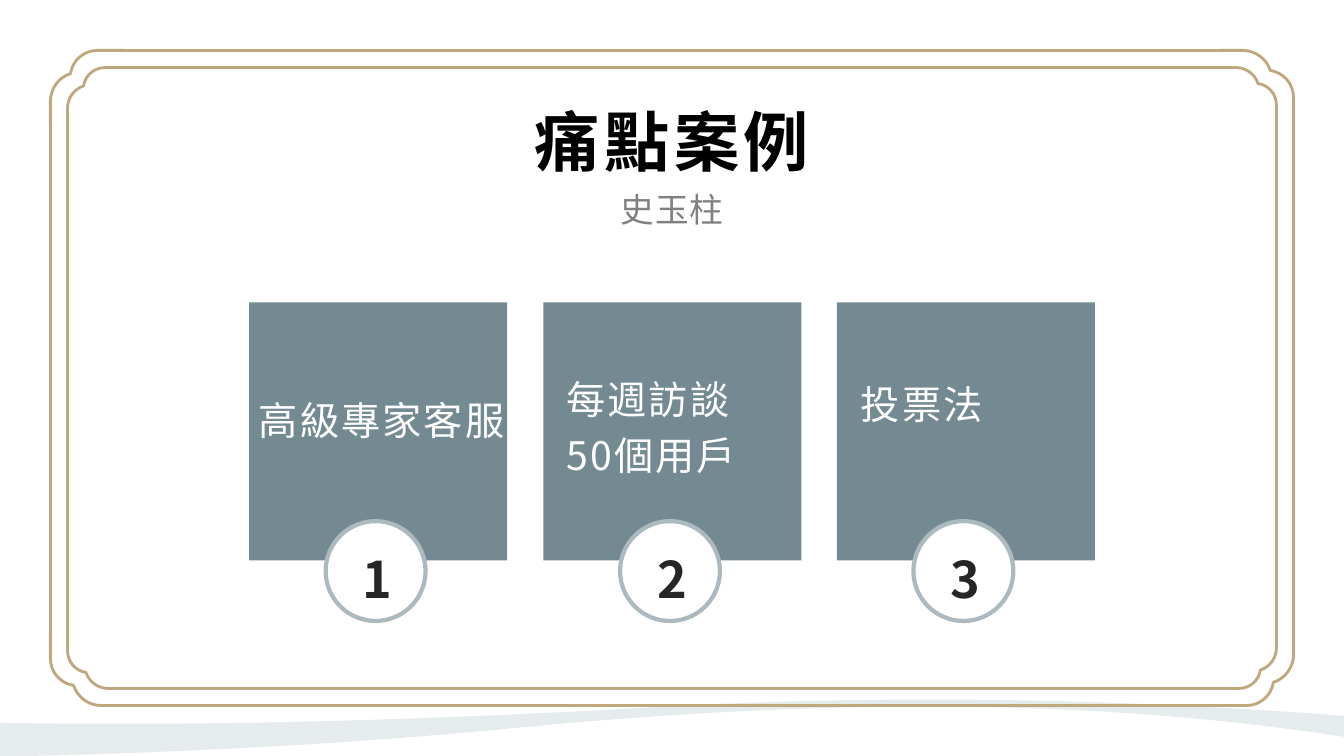
from dataclasses import dataclass
from typing import Callable

from lxml.etree import SubElement
from pptx import Presentation
from pptx.dml.color import RGBColor
from pptx.enum.shapes import MSO_CONNECTOR, MSO_SHAPE
from pptx.enum.text import MSO_ANCHOR, PP_ALIGN
from pptx.oxml.ns import qn
from pptx.util import Emu, Pt

PX = 9144
FONT = "Noto Sans CJK SC"
COLORS = {
    "wave": "E6ECEE", "gold": "BFA77E", "card": "748A92", "ring": "ACB9BE",
    "white": "FFFFFF", "title": "000000", "subtitle": "808080", "number": "262626",
}
Point = tuple[float, float]
Segment = tuple[Point, ...]


@dataclass
class Style:
    size: float
    color: str
    spacing: int
    bold: bool = False
    line: float = 1.0
    align: PP_ALIGN = PP_ALIGN.CENTER
    anchor: MSO_ANCHOR = MSO_ANCHOR.TOP
    inset: tuple[int, int] = (7, 3)


@dataclass
class Card:
    text: str
    dx: int
    top: int
    width: int
    line: float


@dataclass
class Frame:
    inset: int
    corner: int
    left_span: tuple[int, int]
    right_span: tuple[int, int]


CARDS = [
    Card("高級專家客服", 0, 374, 274, 1.3),
    Card("每週訪談50個用戶", 13, 358, 225, 1.2),
    Card("投票法", 14, 358, 225, 1.3),
]
CARD_LEFT, CARD_TOP, CARD_SIZE, CARD_SPREAD = 247, 300, 256, 583
FRAMES = [
    Frame(50, 73, (108, 653), (108, 653)),
    Frame(67, 58, (124, 641), (117, 633)),
]
RULE_LEFT, RULE_RIGHT = 117, 1217
SLIDE_W, SLIDE_H = 1333, 750
CORNER_UNIT = 73
CORNER: list[Segment] = [
    ((73, 0),), ((47, 0),), ((33, 0), (22, 10), (20, 23)),
    ((8, 27), (0, 38), (0, 51)), ((0, 73),),
]
WAVE: list[Segment] = [
    ((923, 694),), ((840, 694), (751, 696), (659, 701)),
    ((471, 712), (289, 718), (134, 718)), ((87, 718), (43, 718), (0, 717)),
    ((0, 750),), ((30, 750),), ((158, 747), (321, 740), (493, 724)),
    ((644, 709), (784, 701), (918, 701)), ((1060, 701), (1196, 710), (1333, 731)),
    ((1333, 710),), ((1329, 710),), ((1265, 705), (1112, 694), (923, 694)),
]


def px(*values: float) -> list[Emu]:
    return [Emu(round(v * PX)) for v in values]


def rgb(name: str) -> RGBColor:
    return RGBColor.from_string(COLORS[name])


def paint(sp, fill: str | None = None, line: str | None = None, width: float = 0) -> None:
    sp.shadow.inherit = False
    if fill:
        sp.fill.solid()
        sp.fill.fore_color.rgb = rgb(fill)
    else:
        sp.fill.background()
    if line:
        sp.line.color.rgb = rgb(line)
        sp.line.width = Pt(width)
    else:
        sp.line.fill.background()


def add_outline(s, segments: list[Segment], close: bool):
    points = [tuple(px(*q)) for seg in segments for q in seg]
    builder = s.shapes.build_freeform(*points[0], scale=1.0)
    builder.add_line_segments(points[1:], close=close)
    sp = builder.convert_to_shape()
    steps = iter(list(sp._element.iter(qn("a:lnTo"))))
    for seg in segments[1:]:
        step = next(steps)
        if len(seg) == 3:
            step.tag = qn("a:cubicBezTo")
            for extra in (next(steps), next(steps)):
                step.append(extra[0])
                extra.getparent().remove(extra)
    return sp


def add_rule(s, x1: int, y1: int, x2: int, y2: int) -> None:
    c = s.shapes.add_connector(MSO_CONNECTOR.STRAIGHT, *px(x1, y1, x2, y2))
    c.line.color.rgb = rgb("gold")
    c.line.width = Pt(2)
    SubElement(c._element.spPr, qn("a:effectLst"))


def write(sp, text: str, style: Style) -> None:
    tf = sp.text_frame
    tf.word_wrap = True
    tf.vertical_anchor = style.anchor
    tf.margin_left = tf.margin_right = px(style.inset[0])[0]
    tf.margin_top = tf.margin_bottom = px(style.inset[1])[0]
    p = tf.paragraphs[0]
    p.text = text
    p.alignment = style.align
    p.line_spacing = style.line
    font = p.font
    font.name, font.size, font.bold = FONT, Pt(style.size), style.bold
    font.color.rgb = rgb(style.color)
    props = p._p.pPr.find(qn("a:defRPr"))
    props.set("spc", str(style.spacing))
    SubElement(props, qn("a:ea")).set("typeface", FONT)


def add_text(s, x: int, y: int, w: int, h: int, text: str, style: Style) -> None:
    write(s.shapes.add_textbox(*px(x, y, w, h)), text, style)


def draw_frame(s, frame: Frame) -> None:
    l = t = frame.inset
    r, b = SLIDE_W - l, SLIDE_H - t
    k = frame.corner / CORNER_UNIT
    turns: list[Callable[[float, float], Point]] = [
        lambda x, y: (l + x, t + y), lambda x, y: (r - y, t + x),
        lambda x, y: (r - x, b - y), lambda x, y: (l + y, b - x),
    ]
    for turn in turns:
        corner = [tuple(turn(x * k, y * k) for x, y in seg) for seg in CORNER]
        paint(add_outline(s, corner, False), line="gold", width=2)
    for y in (t, b):
        add_rule(s, RULE_LEFT, y, RULE_RIGHT, y)
    for x, (y1, y2) in ((l, frame.left_span), (r, frame.right_span)):
        add_rule(s, x, y1, x, y2)


def draw_card(s, index: int, card: Card) -> None:
    x = CARD_LEFT + round(CARD_SPREAD * index / (len(CARDS) - 1))
    square = s.shapes.add_shape(MSO_SHAPE.RECTANGLE, *px(x, CARD_TOP, CARD_SIZE, CARD_SIZE))
    paint(square, "card")
    badge = s.shapes.add_shape(MSO_SHAPE.OVAL, *px(x + 76, 517, 99, 99))
    paint(badge, "white", "ring", 3)
    add_text(s, x + card.dx, card.top, card.width, 124, card.text,
             Style(28, "white", 150, line=card.line, align=PP_ALIGN.LEFT, inset=(10, 5)))
    add_text(s, x + 78, 519, 99, 91, str(index + 1),
             Style(36, "number", 300, True, 1.3, anchor=MSO_ANCHOR.MIDDLE, inset=(0, 0)))


def main() -> None:
    prs = Presentation()
    prs.slide_width, prs.slide_height = px(SLIDE_W, SLIDE_H)
    s = prs.slides.add_slide(prs.slide_layouts[5])
    paint(add_outline(s, WAVE, True), "wave")
    title = s.shapes.title
    title.left, title.top, title.width, title.height = px(183, 100, 967, 82)
    write(title, "痛點案例", Style(46.6, "title", 320, True, 0.9, anchor=MSO_ANCHOR.BOTTOM))
    add_text(s, 183, 184, 967, 48, "史玉柱", Style(24, "subtitle", 80))
    for frame in FRAMES:
        draw_frame(s, frame)
    for index, card in enumerate(CARDS):
        draw_card(s, index, card)
    prs.save("out.pptx")


if __name__ == "__main__":
    main()
